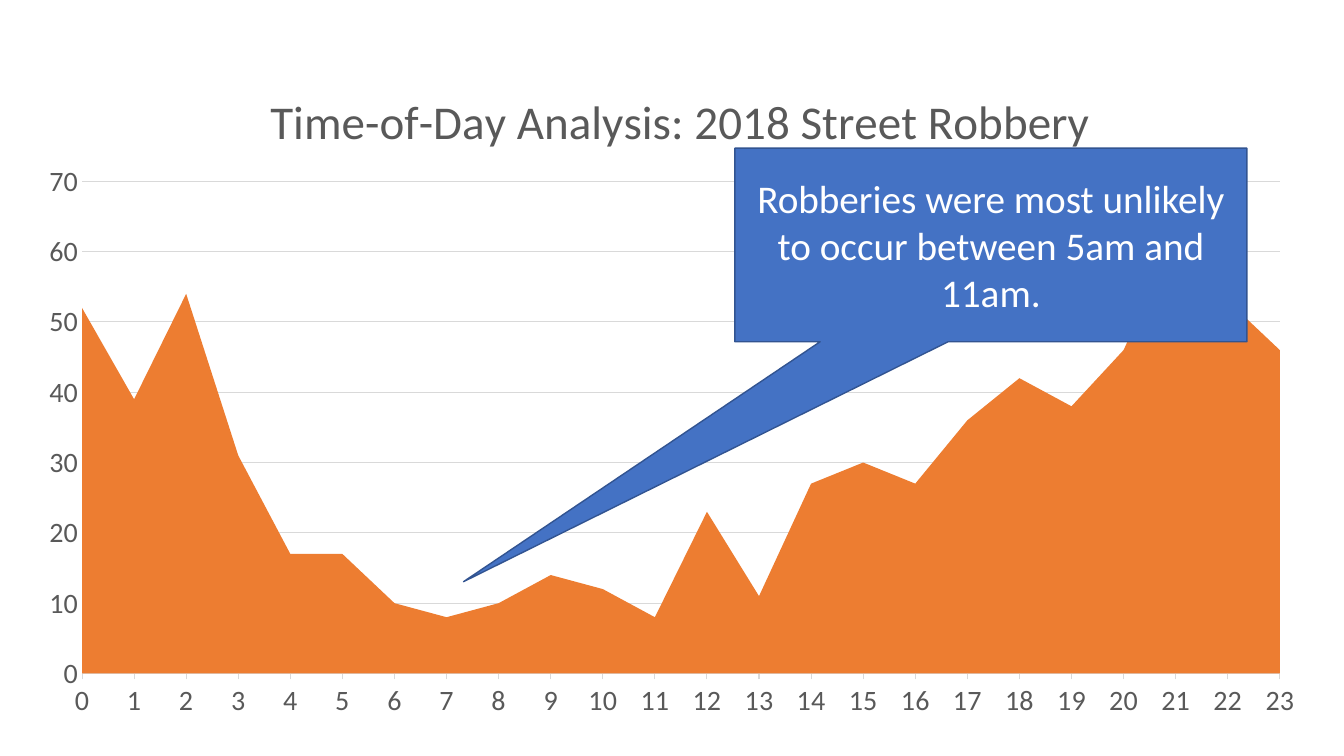
from typing import Any, NamedTuple

from lxml.etree import SubElement
from pptx import Presentation
from pptx.chart.data import CategoryChartData
from pptx.dml.color import RGBColor
from pptx.enum.chart import XL_CHART_TYPE, XL_TICK_MARK
from pptx.enum.shapes import MSO_SHAPE
from pptx.enum.text import MSO_ANCHOR, PP_ALIGN
from pptx.oxml.ns import qn
from pptx.util import Pt

FONT = "Calibri"
GREY, GRID, ORANGE, BLUE, NAVY, WHITE = (
    "595959", "D9D9D9", "ED7D31", "4472C4", "325491", "FFFFFF")
ROBBERIES = (52, 39, 54, 31, 17, 17, 10, 8, 10, 14, 12, 8,
             23, 11, 27, 30, 27, 36, 42, 38, 46, 62, 53, 46)


class Box(NamedTuple):
    left: float
    top: float
    width: float
    height: float

    def lengths(self) -> list[Pt]:
        return [Pt(v) for v in self]


CHART = Box(16.56, 32.4, 925.92, 489.6)
PLOT = Box(58.6, 129.6, 855.6, 351.6)
CALLOUT = Box(524.88, 105.84, 365.76, 138.24)
TITLE_LEFT, TITLE_TOP = 187, 57


def rgb(color: str) -> RGBColor:
    return RGBColor.from_string(color)


def apply(obj: Any, fmt: dict[str, Any]) -> None:
    for name, value in fmt.items():
        setattr(obj, name, value)


def style_font(font: Any, size: float, color: str) -> None:
    apply(font, {"name": FONT, "size": Pt(size), "bold": False})
    font.color.rgb = rgb(color)


def style_line(line: Any, color: str, width: float) -> None:
    line.color.rgb = rgb(color)
    line.width = Pt(width)


def set_layout(parent: Any, index: int, values: dict[str, Any]) -> None:
    for old in parent.findall(qn("c:layout")):
        parent.remove(old)
    layout = SubElement(parent, qn("c:layout"))
    manual = SubElement(layout, qn("c:manualLayout"))
    for tag, value in values.items():
        SubElement(manual, qn(f"c:{tag}")).set("val", str(value))
    parent.insert(index, layout)


def position(left: float, top: float) -> dict[str, Any]:
    return {"xMode": "edge", "yMode": "edge",
            "x": round((left - CHART.left) / CHART.width, 4),
            "y": round((top - CHART.top) / CHART.height, 4)}


def add_robbery_chart(s: Any) -> None:
    data = CategoryChartData()
    data.categories = [str(hour) for hour in range(len(ROBBERIES))]
    data.add_series("Series 1", ROBBERIES)
    chart = s.shapes.add_chart(XL_CHART_TYPE.AREA, *CHART.lengths(), data).chart
    apply(chart, {"has_legend": False, "has_title": True})
    style_font(chart.font, 28, "000000")

    title = chart.chart_title
    r = title.text_frame.paragraphs[0].add_run()
    r.text = "Time-of-Day Analysis: 2018 Street Robbery"
    style_font(r.font, 33.6, GREY)
    title.include_in_layout = False
    set_layout(title._element, 1, position(TITLE_LEFT, TITLE_TOP))

    plot = chart.plots[0]
    plot.vary_by_categories = False
    fill = plot.series[0].format.fill
    fill.solid()
    fill.fore_color.rgb = rgb(ORANGE)
    set_layout(chart._chartSpace.chart.plotArea, 0, {
        "layoutTarget": "inner", **position(PLOT.left, PLOT.top),
        "w": round(PLOT.width / CHART.width, 4),
        "h": round(PLOT.height / CHART.height, 4)})

    hours, counts = chart.category_axis, chart.value_axis
    for axis, tick in ((hours, XL_TICK_MARK.OUTSIDE), (counts, XL_TICK_MARK.NONE)):
        apply(axis, {"major_tick_mark": tick, "minor_tick_mark": XL_TICK_MARK.NONE})
        style_font(axis.tick_labels.font, 20, GREY)
    hours.has_major_gridlines = False
    style_line(hours.format.line, GRID, 0.75)
    apply(counts, {"minimum_scale": 0, "maximum_scale": 70, "major_unit": 10,
                   "has_major_gridlines": True})
    counts.format.line.fill.background()
    style_line(counts.major_gridlines.format.line, GRID, 0.75)
    counts._element.find(qn("c:crossBetween")).set("val", "midCat")


def add_callout(s: Any) -> None:
    sp = s.shapes.add_shape(MSO_SHAPE.RECTANGULAR_CALLOUT, *CALLOUT.lengths())
    sp.adjustments[0], sp.adjustments[1] = -1.03, 1.74
    sp.shadow.inherit = False
    sp.fill.solid()
    sp.fill.fore_color.rgb = rgb(BLUE)
    style_line(sp.line, NAVY, 1)
    tf = sp.text_frame
    apply(tf, {"word_wrap": True, "vertical_anchor": MSO_ANCHOR.MIDDLE})
    p = tf.paragraphs[0]
    p.alignment = PP_ALIGN.CENTER
    r = p.add_run()
    r.text = "Robberies were most unlikely to occur between 5am and 11am."
    style_font(r.font, 28, WHITE)


def main() -> None:
    prs = Presentation()
    apply(prs, {"slide_width": Pt(960), "slide_height": Pt(540)})
    s = prs.slides.add_slide(prs.slide_layouts[6])
    add_robbery_chart(s)
    add_callout(s)
    prs.save("out.pptx")


if __name__ == "__main__":
    main()
